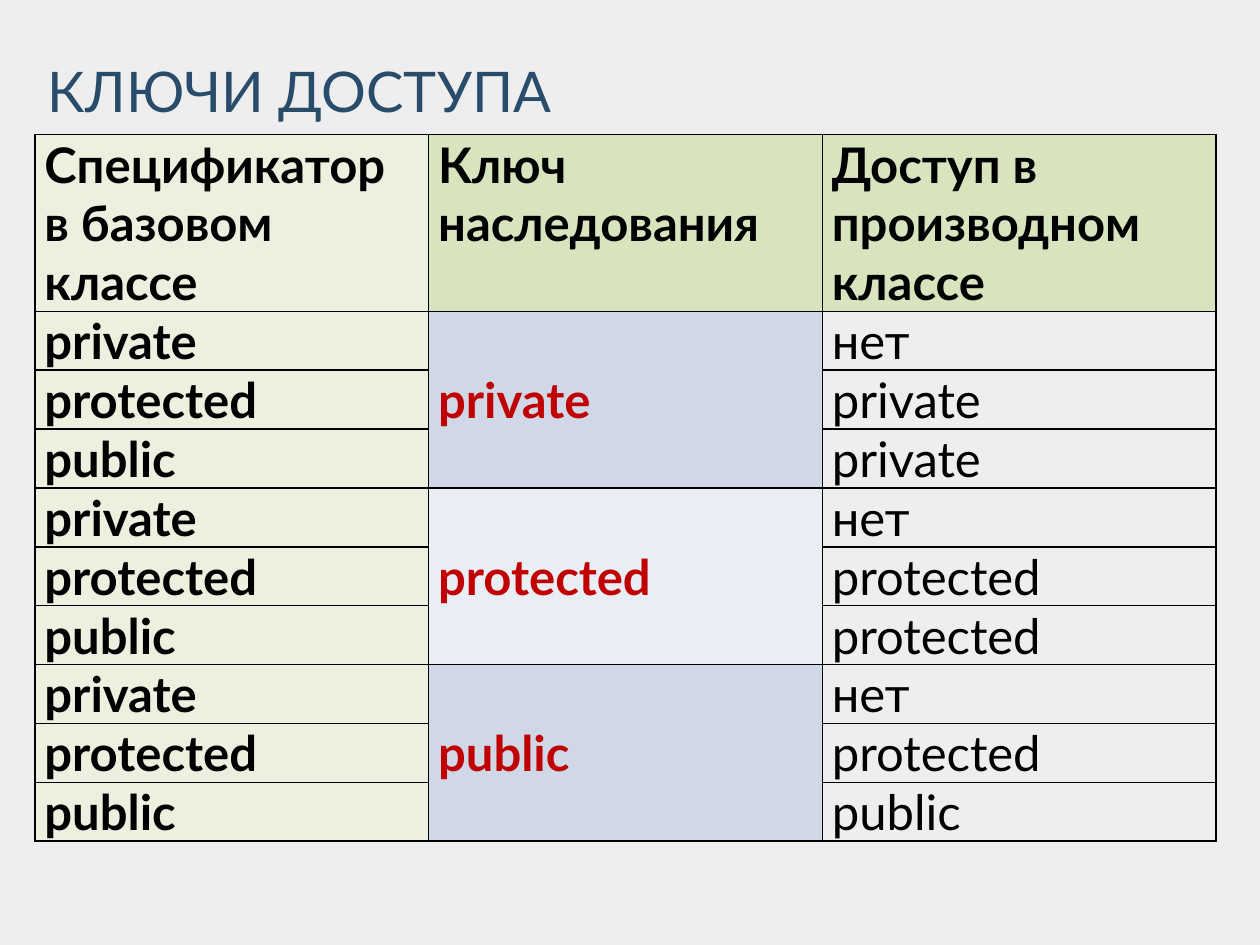
from pptx import Presentation
from pptx.dml.color import RGBColor
from pptx.enum.text import MSO_ANCHOR as Anchor, MSO_AUTO_SIZE as Fit, PP_ALIGN as Align
from pptx.oxml import parse_xml
from pptx.oxml.ns import nsdecls
from pptx.util import Pt

BACK = RGBColor(0xEE, 0xEE, 0xEE)
NAVY = RGBColor(0x28, 0x4C, 0x6A)
BLACK = RGBColor(0, 0, 0)
RED = RGBColor(0xC0, 0, 0)
PALE = RGBColor(0xEB, 0xF1, 0xDE)
GREEN = RGBColor(0xD7, 0xE4, 0xBD)
BLUE = RGBColor(0xD0, 0xD8, 0xE8)
LIGHT = RGBColor(0xE9, 0xED, 0xF4)

LEFT, WIDTH = 20, 675
TOP, HEAD, ROW = 77, 100.8, 33.6


def write(frame, text, size=28, color=BLACK, bold=False):
    frame.word_wrap = True
    para = frame.paragraphs[0]
    para.alignment = Align.LEFT
    run = para.add_run()
    run.text = text
    font = run.font
    font.name, font.size, font.bold = "Lato", Pt(size), bold
    font.color.rgb = color


def style(cell, fill=None, anchor=Anchor.MIDDLE):
    cell.margin_left = cell.margin_right = Pt(5.4)
    cell.margin_top = cell.margin_bottom = 0
    cell.vertical_anchor = anchor
    if fill is None:
        cell.fill.background()
    else:
        cell.fill.solid()
        cell.fill.fore_color.rgb = fill
    # Borders come before the fill in the cell properties
    props = cell._tc.get_or_add_tcPr()
    for i, side in enumerate("LRTB"):
        props.insert(i, parse_xml(
            f'<a:ln{side} {nsdecls("a")} w="12700"><a:solidFill>'
            f'<a:srgbClr val="{BLACK}"/></a:solidFill></a:ln{side}>'))


prs = Presentation()
prs.slide_width, prs.slide_height = Pt(720), Pt(540)
slide = prs.slides.add_slide(prs.slide_layouts[5])
slide.background.fill.solid()
slide.background.fill.fore_color.rgb = BACK

# Title
title = slide.shapes.title
title.left, title.top = Pt(LEFT), Pt(26)
title.width, title.height = Pt(WIDTH), Pt(51)
title.text_frame.auto_size = Fit.NONE
title.text_frame.vertical_anchor = Anchor.MIDDLE
write(title.text_frame, "КЛЮЧИ ДОСТУПА", size=32, color=NAVY)

# Table grid
levels = ["private", "protected", "public"]
heads = ["Спецификатор в базовом классе", "Ключ наследования",
         "Доступ в производном классе"]
access = {
    "private": ["нет", "private", "private"],
    "protected": ["нет", "protected", "protected"],
    "public": ["нет", "protected", "public"],
}
table = slide.shapes.add_table(10, 3, Pt(LEFT), Pt(TOP), Pt(WIDTH),
                               Pt(HEAD + 9 * ROW)).table
table.horz_banding = False
for col in table.columns:
    col.width = Pt(WIDTH / 3)
for i, row in enumerate(table.rows):
    row.height = Pt(ROW if i else HEAD)

# Header row
for col, (text, fill) in enumerate(zip(heads, [PALE, GREEN, GREEN])):
    cell = table.cell(0, col)
    style(cell, fill, Anchor.TOP)
    write(cell.text_frame, text, bold=True)

# One group of three rows for each inheritance key
for group, (key, fill) in enumerate(zip(levels, [BLUE, LIGHT, BLUE])):
    first = 1 + 3 * group
    for i, (level, result) in enumerate(zip(levels, access[key])):
        base, mid, last = (table.cell(first + i, col) for col in range(3))
        style(base, PALE)
        style(mid, fill)
        style(last)
        write(base.text_frame, level, bold=True)
        write(last.text_frame, result)
    table.cell(first, 1).merge(table.cell(first + 2, 1))
    write(table.cell(first, 1).text_frame, key, color=RED, bold=True)

prs.save("out.pptx")
